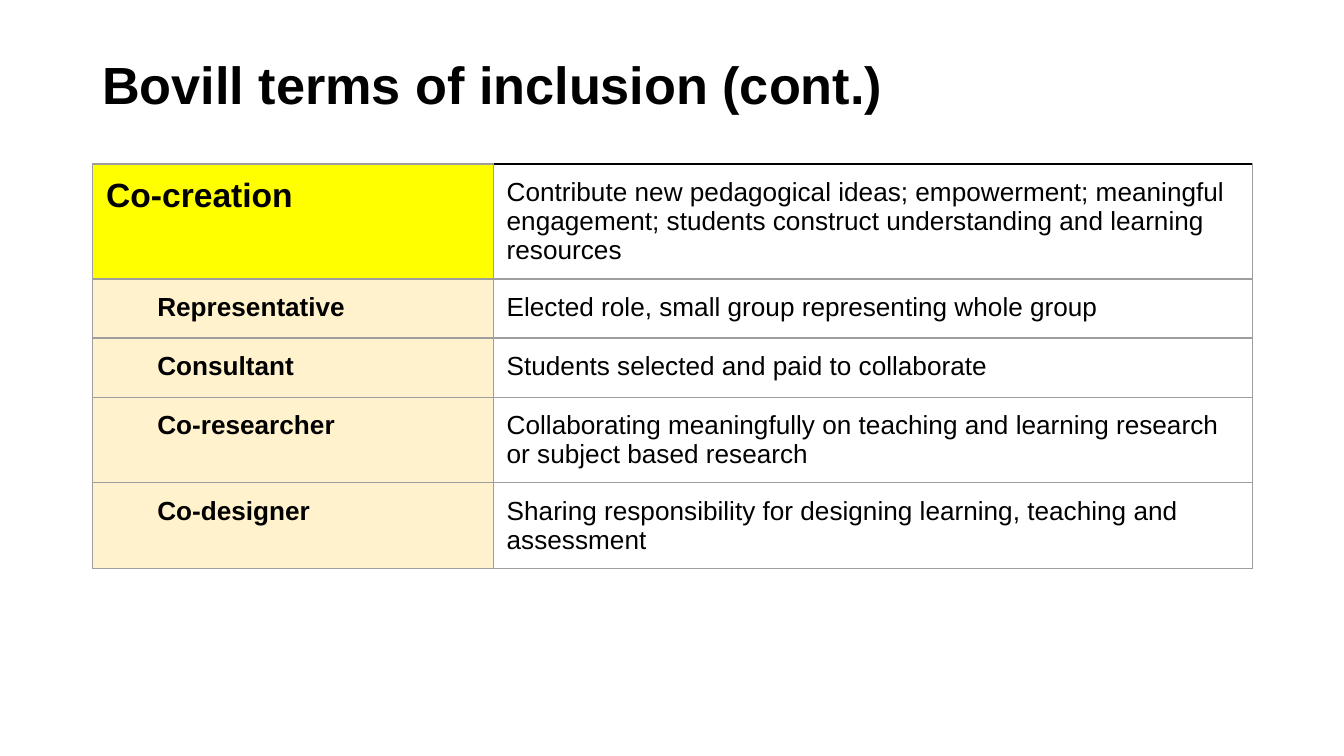
from dataclasses import dataclass

import lxml.etree
import pptx
import pptx.dml.color
import pptx.enum.text
import pptx.oxml.ns
import pptx.util

Inches = pptx.util.Inches
Pt = pptx.util.Pt
Color = pptx.dml.color.RGBColor.from_string


@dataclass(frozen=True)
class Theme:
    font: str = "Arial"
    ink: str = "000000"
    rule: str = "9E9E9E"
    main: str = "FFFF00"
    sub: str = "FFF2CC"
    title: int = 28
    lead: int = 18
    body: int = 14
    pad: float = 0.1
    indent: float = 0.38


@dataclass(frozen=True)
class Term:
    name: str
    text: str
    main: bool = False


THEME = Theme()
WIDTH = 10
HEIGHT = WIDTH * 9 / 16
LEFT = 0.069 * WIDTH
COLS = (2.98, 5.65)
ROW = 0.44  # least height; rows grow with their text

TERMS = (
    Term("Co-creation", "Contribute new pedagogical ideas; empowerment; meaningful "
         "engagement; students construct understanding and learning resources", True),
    Term("Representative", "Elected role, small group representing whole group"),
    Term("Consultant", "Students selected and paid to collaborate"),
    Term("Co-researcher", "Collaborating meaningfully on teaching and learning "
         "research or subject based research"),
    Term("Co-designer", "Sharing responsibility for designing learning, teaching "
         "and assessment"),
)


def write(frame, text: str, size: int, bold: bool) -> None:
    run = frame.paragraphs[0].add_run()
    run.text = text
    font = run.font
    font.name, font.size, font.bold = THEME.font, Pt(size), bold
    font.color.rgb = Color(THEME.ink)


def edge(cell, side: str, color: str, width: float) -> None:
    """Draw one border; call in the order L, R, T, B and before the fill."""
    qn = pptx.oxml.ns.qn
    props = cell._tc.get_or_add_tcPr()
    line = lxml.etree.SubElement(props, qn(f"a:ln{side}"), w=str(Pt(width)))
    fill = lxml.etree.SubElement(line, qn("a:solidFill"))
    lxml.etree.SubElement(fill, qn("a:srgbClr"), val=color)


def style(cell, fill: str | None, indent: float = 0, dark: bool = False) -> None:
    pad = Inches(THEME.pad)
    cell.margin_right = cell.margin_top = cell.margin_bottom = pad
    cell.margin_left = Inches(THEME.pad + indent)
    cell.vertical_anchor = pptx.enum.text.MSO_ANCHOR.TOP
    for side in "LRTB":
        top = dark and side == "T"
        edge(cell, side, THEME.ink if top else THEME.rule, 1 if top else 0.75)
    if fill:
        cell.fill.solid()
        cell.fill.fore_color.rgb = Color(fill)
    else:
        cell.fill.background()


def add_title(slide, text: str) -> None:
    title = slide.shapes.title
    title.left, title.top = Inches(LEFT), Inches(0.3)
    title.width, title.height = Inches(WIDTH - 2 * LEFT), Inches(0.7)
    frame = title.text_frame
    frame.margin_left = frame.margin_right = Inches(0.07)
    frame.margin_top = frame.margin_bottom = Inches(0.04)
    frame.vertical_anchor = pptx.enum.text.MSO_ANCHOR.MIDDLE
    frame.auto_size = pptx.enum.text.MSO_AUTO_SIZE.NONE
    frame.word_wrap = True
    para = frame.paragraphs[0]
    para.alignment = pptx.enum.text.PP_ALIGN.LEFT
    para.line_spacing = 0.9
    write(frame, text, THEME.title, True)


def add_terms(slide, terms: tuple[Term, ...]) -> None:
    table = slide.shapes.add_table(
        len(terms), len(COLS), Inches(LEFT), Inches(1.22),
        Inches(sum(COLS)), Inches(ROW * len(terms))).table
    table.first_row = table.horz_banding = False
    for col, width in zip(table.columns, COLS):
        col.width = Inches(width)
    for row, term in zip(table.rows, terms):
        row.height = Inches(ROW)
        name, text = row.cells
        style(name, THEME.main if term.main else THEME.sub,
              0 if term.main else THEME.indent)
        style(text, None, dark=term.main)
        write(name.text_frame, term.name, THEME.lead if term.main else THEME.body, True)
        write(text.text_frame, term.text, THEME.body, False)


def main() -> None:
    deck = pptx.Presentation()
    deck.slide_width, deck.slide_height = Inches(WIDTH), Inches(HEIGHT)
    slide = deck.slides.add_slide(deck.slide_layouts.get_by_name("Title Only"))
    add_title(slide, "Bovill terms of inclusion (cont.)")
    add_terms(slide, TERMS)
    deck.save("out.pptx")


if __name__ == "__main__":
    main()
